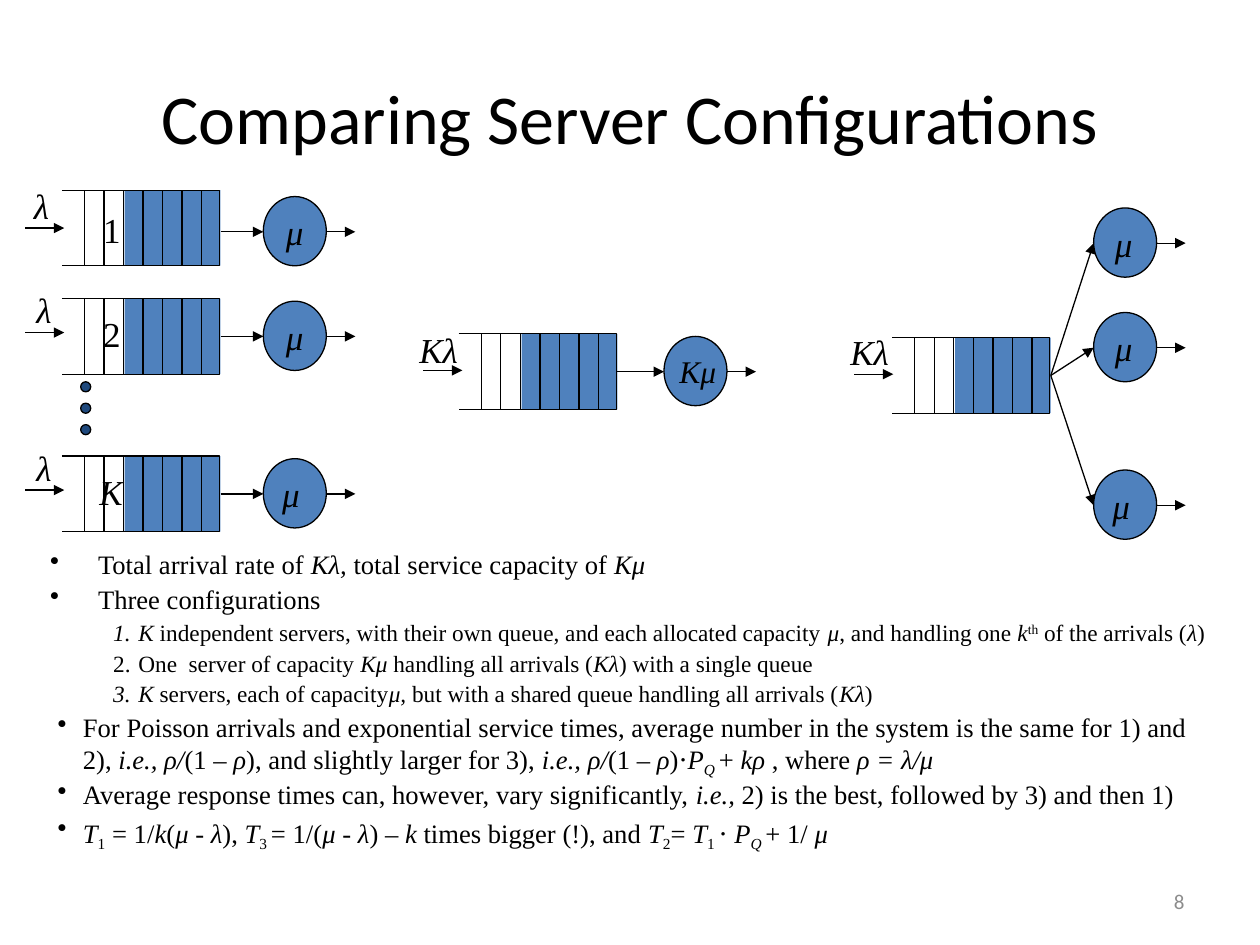
from dataclasses import dataclass
from itertools import groupby

from lxml.etree import SubElement
from pptx import Presentation
from pptx.dml.color import RGBColor
from pptx.enum.shapes import MSO_CONNECTOR, MSO_SHAPE
from pptx.enum.text import MSO_ANCHOR, PP_ALIGN
from pptx.oxml.ns import qn
from pptx.util import Inches, Pt


@dataclass(frozen=True)
class Theme:
    ink: str = "000000"
    blue: str = "4F81BD"
    navy: str = "1F497D"
    gray: str = "8C8C8C"
    sans: str = "Calibri"
    serif: str = "Times New Roman"
    head: float = 40
    label: float = 20
    small: float = 18
    body: float = 15.2
    item: float = 13.3
    foot: float = 12
    line: float = 0.75


def put(obj, **form):
    for key, val in form.items():
        setattr(obj, key, val)


def tag(parent, name, **attrs):
    return SubElement(parent, qn(name), attrs)


def marks(text):
    """Yield (text, italic, baseline); * toggles italic, _ sub, ^ super."""
    on = {"*": False, "_": False, "^": False}
    chars = []
    for char in text:
        if char in on:
            on[char] = not on[char]
        else:
            base = -25000 if on["_"] else 30000 if on["^"] else 0
            chars.append((char, on["*"], base))
    for key, part in groupby(chars, key=lambda c: c[1:]):
        yield "".join(c[0] for c in part), *key


class Board:
    def __init__(self, slide, theme):
        self.slide, self.theme = slide, theme
        self.shapes = slide.shapes

    def runs(self, para, text, size, font=None, color=None):
        for part, slant, base in marks(text):
            run = para.add_run()
            run.text = part
            put(run.font, size=Pt(size), name=font or self.theme.serif, italic=slant)
            run.font.color.rgb = RGBColor.from_string(color or self.theme.ink)
            if base:
                run.font._element.set("baseline", str(base))

    def text(self, x, y, w, h, words, size, align=PP_ALIGN.LEFT, wrap=False, **look):
        box = self.shapes.add_textbox(Inches(x), Inches(y), Inches(w), Inches(h))
        put(box.text_frame, word_wrap=wrap, vertical_anchor=MSO_ANCHOR.MIDDLE)
        para = box.text_frame.paragraphs[0]
        para.alignment = align
        self.runs(para, words, size, **look)

    def label(self, x, y, words, w=0.34):
        self.text(x, y, w, 0.44, words, self.theme.label)

    def style(self, shape, fill=None, line=True):
        shape.shadow.inherit = False
        if fill:
            shape.fill.solid()
            shape.fill.fore_color.rgb = RGBColor.from_string(fill)
        else:
            shape.fill.background()
        if line:
            self.pen(shape.line)
        else:
            shape.line.fill.background()

    def pen(self, line):
        line.width = Pt(self.theme.line)
        line.color.rgb = RGBColor.from_string(self.theme.ink)

    def shape(self, kind, x, y, w, h, fill, line=True):
        shape = self.shapes.add_shape(kind, Inches(x), Inches(y), Inches(w), Inches(h))
        self.style(shape, fill, line)
        return shape

    def wire(self, x1, y1, x2, y2, arrow=True, start=None):
        wire = self.shapes.add_connector(
            MSO_CONNECTOR.STRAIGHT, Inches(x1), Inches(y1), Inches(x2), Inches(y2))
        if start is not None:
            wire.begin_connect(start, 3)
        self.pen(wire.line)
        if arrow:
            tag(wire.line._get_or_add_ln(), "a:tailEnd", type="triangle")
        tag(wire._element.spPr, "a:effectLst")

    def queue(self, x, y):
        w, h = 1.25, 0.6
        fill = self.shape(MSO_SHAPE.RECTANGLE, x + 0.5, y, w - 0.49, h,
                          self.theme.blue, line=False)
        for i in range(7):
            slot = x + 0.18 + 0.155 * i
            self.wire(slot, y, slot, y + h, arrow=False)
        pts = [(Inches(a), Inches(b)) for a, b in
               [(x, y), (x + w, y), (x + w, y + h), (x, y + h)]]
        edge = self.shapes.build_freeform(*pts[0])
        edge.add_line_segments(pts[1:], close=False)
        self.style(edge.convert_to_shape())
        return fill

    def server(self, x, y):
        """Draw a server whose left end is at x and whose middle is at y."""
        disc = self.shape(MSO_SHAPE.OVAL, x, y - 0.28, 0.5, 0.55, self.theme.blue)
        self.wire(x + 0.5, y, x + 0.73, y)
        return disc

    def points(self, x, y, w, h, rows):
        frame = self.shapes.add_textbox(
            Inches(x), Inches(y), Inches(w), Inches(h)).text_frame
        put(frame, word_wrap=True, margin_right=Inches(0.08))
        for i, (kind, words) in enumerate(rows):
            para = frame.add_paragraph() if i else frame.paragraphs[0]
            left, hang, level = KINDS[kind]
            size = self.theme.item if level else self.theme.body
            put(para, level=level, line_spacing=0.9, space_before=Pt(size * 0.24))
            props = para._p.get_or_add_pPr()
            props.set("marL", str(Inches(left)))
            props.set("indent", str(-Inches(hang)))
            if level:
                tag(props, "a:buAutoNum", type="arabicPeriod")
            else:
                tag(props, "a:buChar", char="•")
            self.runs(para, words, size)


# Left indent, hanging indent and level of each kind of paragraph
KINDS = {"wide": (0.38, 0.38, 0), "item": (0.7, 0.2, 1), "near": (0.26, 0.2, 0)}

ROWS = [
    ("wide", "Total arrival rate of *Kλ, *total service capacity of *Kμ*"),
    ("wide", "Three configurations"),
    ("item", "*K *independent servers, with their own queue, and each allocated "
             "capacity *μ*, and handling one *k*^th^ of the arrivals (*λ*)"),
    ("item", "One  server of capacity *Kμ* handling all arrivals (*Kλ*) "
             "with a single queue"),
    ("item", "*K* servers, each of capacity*μ,* but with a shared queue "
             "handling all arrivals (*Kλ*)"),
    ("near", "For Poisson arrivals and exponential service times, average number in "
             "the system is the same for 1) and 2),* i.e., ρ/*(1 – *ρ*), and slightly "
             "larger for 3), *i.e., ρ/*(1 – *ρ*)⋅*P_Q _*+ *kρ* , where *ρ = λ/μ*"),
    ("near", "Average response times can, however, vary significantly, *i.e.,* 2) is "
             "the best, followed by 3) and then 1)"),
    ("near", "*T*_1_ = 1/*k*(*μ - λ*), *T*_3 _= 1/(*μ - λ*) – *k *times bigger (!), "
             "and *T*_2_= *T*_1 _*⋅ P_Q _*+ 1/* μ*"),
]


def main():
    deck = Presentation()
    put(deck, slide_width=Inches(10), slide_height=Inches(7.5))
    theme = Theme()
    board = Board(deck.slides.add_slide(deck.slide_layouts[6]), theme)

    # Title, body and page number
    board.text(0.5, 0.3, 9, 1.25, "Comparing Server Configurations", theme.head,
               PP_ALIGN.CENTER, True, font=theme.sans)
    board.points(0.3, 4.33, 9.37, 2.58, ROWS)
    board.text(7.17, 6.95, 2.33, 0.4, "8", theme.foot, PP_ALIGN.RIGHT, True,
               font=theme.sans, color=theme.gray)

    # Separate queues: middle, queue top, name, and left of each label
    for mid, top, name, lam, num, mu in [
            (1.84, 1.51, "1", 0.17, 0.72, 2.17),
            (2.67, 2.37, "2", 0.19, 0.72, 2.17),
            (3.92, 3.62, "*K*", 0.19, 0.69, 2.14)]:
        fill = board.queue(0.49, top)
        centred = abs(top + 0.3 - mid) < 0.01
        board.wire(0.2, mid - 0.03, 0.51, mid - 0.03)
        board.wire(1.75, mid, 2.09, mid, start=fill if centred else None)
        board.server(2.09, mid)
        board.label(lam, mid - 0.43, "*λ*")
        board.label(num, mid - 0.24, name)
        board.label(mu, mid - 0.22, "*μ*")
    for i in range(3):
        board.shape(MSO_SHAPE.OVAL, 0.64, 3.03 + 0.17 * i, 0.08, 0.08, theme.navy)

    # One fast server
    fill = board.queue(3.64, 2.65)
    board.wire(3.36, 2.94, 3.67, 2.94)
    board.wire(4.9, 2.95, 5.27, 2.95, start=fill)
    board.label(3.23, 2.55, "*Kλ*", 0.51)
    frame = board.server(5.27, 2.95).text_frame
    put(frame, word_wrap=False, vertical_anchor=MSO_ANCHOR.MIDDLE,
        margin_left=Inches(0.05), margin_right=Inches(0.1))
    frame.paragraphs[0].alignment = PP_ALIGN.LEFT
    board.runs(frame.paragraphs[0], "*Kμ*", theme.small)

    # Shared queue
    fill = board.queue(7.08, 2.68)
    board.wire(6.78, 2.97, 7.09, 2.97)
    board.label(6.65, 2.57, "*Kλ*", 0.51)
    for mid, mu in [(1.93, 8.75), (2.76, 8.75), (4.01, 8.73)]:
        board.wire(8.34, 2.98, 8.68, mid, start=fill)
        board.server(8.68, mid)
        board.label(mu, mid - 0.22, "*μ*")

    deck.save("out.pptx")


if __name__ == "__main__":
    main()
